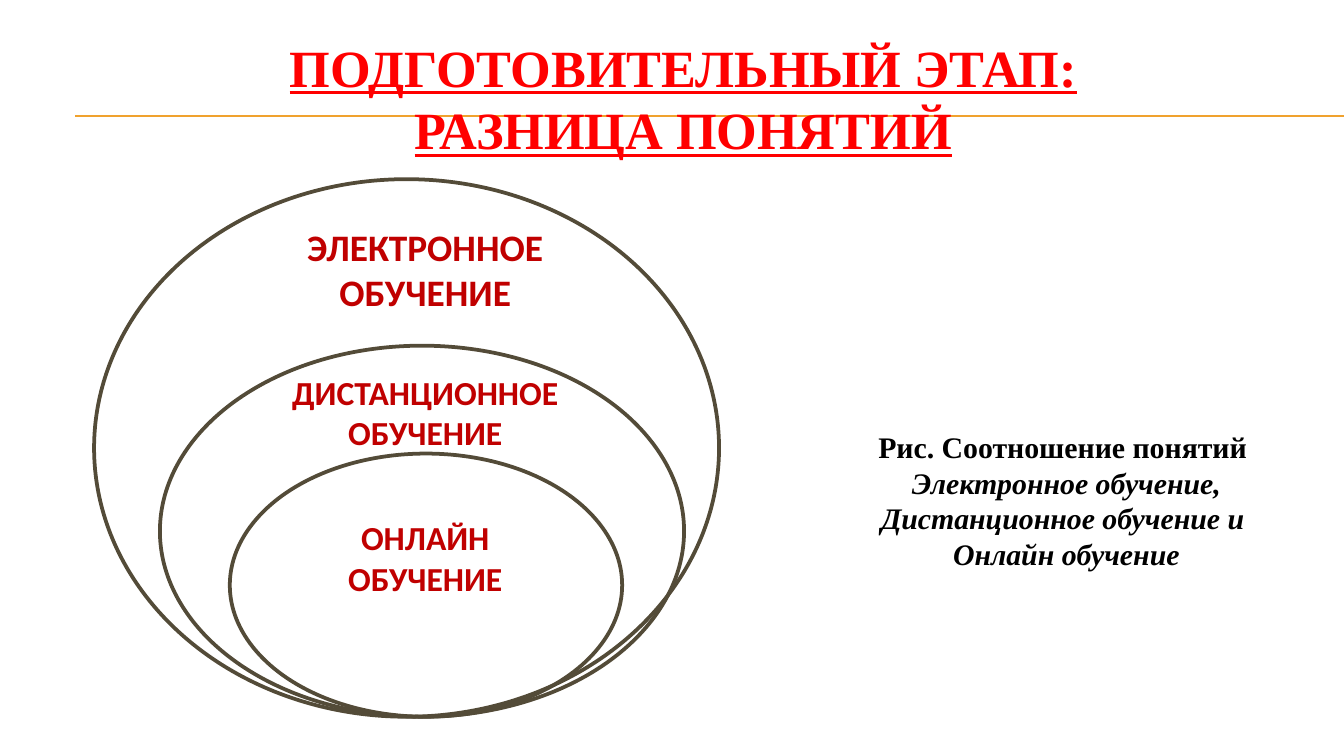
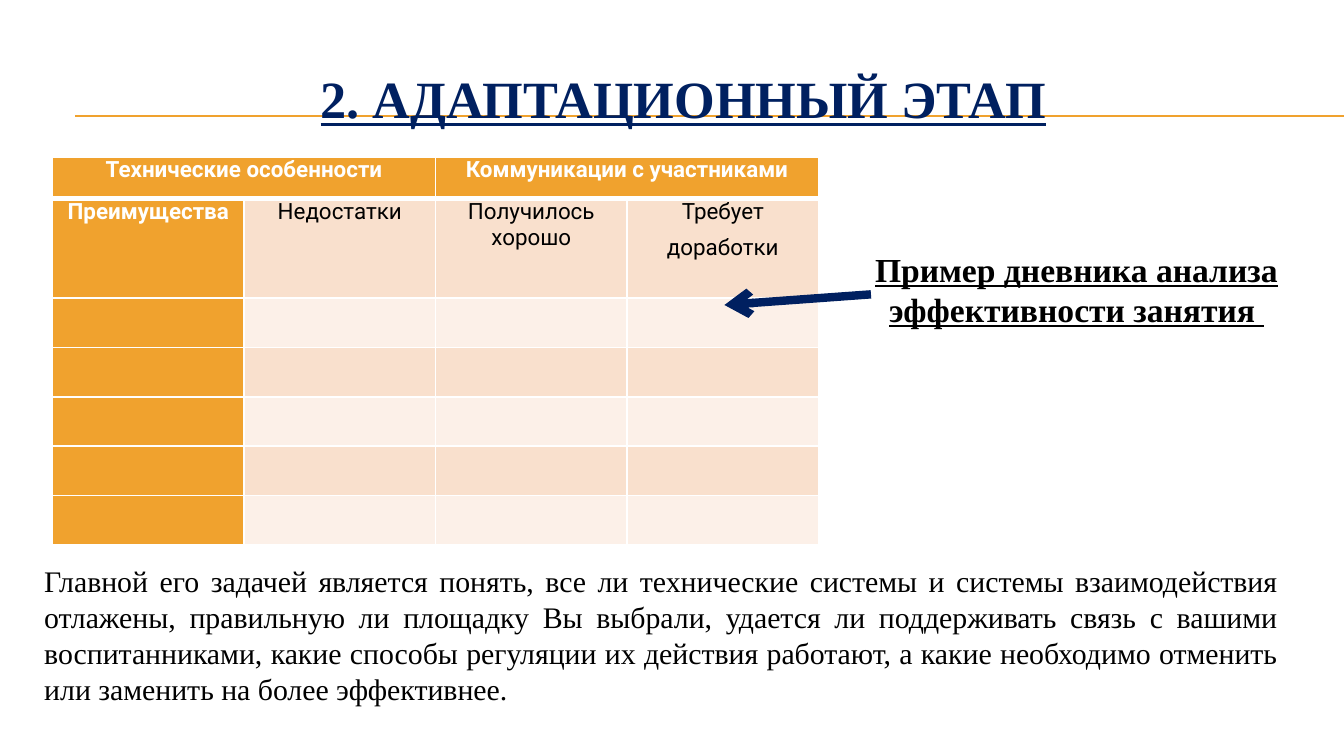
"""Build two slides on the stages of moving to distance learning."""
from dataclasses import dataclass

from lxml.etree import SubElement
from pptx import Presentation
from pptx.dml.color import RGBColor
from pptx.enum.shapes import MSO_CONNECTOR as Connector, MSO_SHAPE as Shape
from pptx.enum.text import MSO_ANCHOR as Anchor, PP_ALIGN as Align
from pptx.oxml.ns import qn
from pptx.util import Pt


@dataclass(frozen=True)
class Theme:
    serif: str = "Times New Roman"
    sans: str = "Calibri"
    grid: str = "Roboto"
    amber: str = "F0A22E"
    red: str = "FF0000"
    crimson: str = "C00000"
    navy: str = "002060"
    olive: str = "534B38"
    black: str = "000000"
    white: str = "FFFFFF"
    peach: str = "F9E0CD"
    cream: str = "FCF0E8"
    title: int = 28
    large: int = 20
    medium: int = 18
    body: int = 16
    small: int = 12


THEME = Theme()

PREPARATION_TITLE = "ПОДГОТОВИТЕЛЬНЫЙ ЭТАП:\vРАЗНИЦА ПОНЯТИЙ"
ELLIPSE_BOTTOM = 384
ELLIPSES = [(50.4, 334.8, 288), (85.7, 280.8, 198.8), (123.1, 210.2, 141)]
LABELS = [
    (116.6, THEME.large, ["ЭЛЕКТРОННОЕ", "ОБУЧЕНИЕ"]),
    (195.8, THEME.medium, ["ДИСТАНЦИОННОЕ ОБУЧЕНИЕ"]),
    (273.6, THEME.medium, ["ОНЛАЙН", "ОБУЧЕНИЕ"]),
]
CAPTION = [
    ("Рис. Соотношение понятий ", False),
    ("Электронное обучение, Дистанционное обучение и ", True),
    ("Онлайн обучение", True),
]

ADAPTATION_TITLE = "2. АДАПТАЦИОННЫЙ ЭТАП"
DIARY_HEADS = ["Технические особенности", "Коммуникации с участниками"]
DIARY_COLUMNS = [["Преимущества"], ["Недостатки"], ["Получилось хорошо"],
                 ["Требует", "доработки"]]
DIARY_ROWS = [22.3, 53.2] + [26.5] * 5
DIARY_COLUMN_WIDTH = 102.6
DIARY_NOTE = "Пример дневника анализа эффективности занятия "
GOAL = ("Главной его задачей является понять, все ли технические системы и системы "
        "взаимодействия отлажены, правильную ли площадку Вы выбрали, удается ли "
        "поддерживать связь с вашими воспитанниками, какие способы регуляции их "
        "действия работают, а какие необходимо отменить или заменить на более "
        "эффективнее.")


def rgb(color):
    return RGBColor.from_string(color)


def points(*values):
    return [Pt(value) for value in values]


def add_span(para, text, size, color, font=THEME.serif, bold=True, italic=False,
             underline=False):
    for index, line in enumerate(text.split("\v")):
        if index:
            para.add_line_break()
        span = para.add_run()
        span.text = line
        span.font.name, span.font.size = font, Pt(size)
        span.font.color.rgb = rgb(color)
        span.font.bold, span.font.italic = bold, italic
        span.font.underline = underline


def add_paras(frame, texts, align=Align.CENTER):
    for index, text in enumerate(texts):
        para = frame.add_paragraph() if index else frame.paragraphs[0]
        para.alignment = align
        yield para, text


def add_box(shapes, place, anchor=Anchor.TOP):
    frame = shapes.add_textbox(*points(*place)).text_frame
    frame.word_wrap = True
    frame.vertical_anchor = anchor
    return frame


def add_line(page, ends, color, width):
    line = page.shapes.add_connector(Connector.STRAIGHT, *points(*ends))
    line.line.color.rgb = rgb(color)
    line.line.width = Pt(width)
    SubElement(line._element.spPr, qn("a:effectLst"))
    return line


def add_page(deck, title, color):
    page = deck.slides.add_slide(deck.slide_layouts[6])
    for y in (62, 62.5):
        add_line(page, (40.4, y, 720, y), THEME.amber, 0.75)
    frame = add_box(page.shapes, (24, 27.4, 684, 49.7), Anchor.MIDDLE)
    for para, text in add_paras(frame, [title]):
        add_span(para, text, THEME.title, color, underline=True)
    return page


def add_nested_concepts(page):
    shapes = page.shapes.add_group_shape().shapes
    for left, width, height in ELLIPSES:
        place = points(left, ELLIPSE_BOTTOM - height, width, height)
        ellipse = shapes.add_shape(Shape.OVAL, *place)
        ellipse.shadow.inherit = False
        ellipse.fill.background()
        ellipse.line.color.rgb = rgb(THEME.olive)
        ellipse.line.width = Pt(2)
    for top, size, lines in LABELS:
        frame = add_box(shapes, (113, top, 229.7, 80))
        for para, text in add_paras(frame, lines):
            add_span(para, text, size, THEME.crimson, THEME.sans)


def set_borders(cell, widths):
    properties = cell._tc.get_or_add_tcPr()
    for side in "LRTB":
        border = SubElement(properties, qn(f"a:ln{side}"), w=str(Pt(widths.get(side, 1))))
        fill = SubElement(border, qn("a:solidFill"))
        SubElement(fill, qn("a:srgbClr"), val=THEME.white)


def diary_texts(row, column):
    if row == 0:
        return [] if column % 2 else [DIARY_HEADS[column // 2]]
    return DIARY_COLUMNS[column] if row == 1 else []


def fill_diary_cell(cell, row, column):
    strong = row == 0 or column == 0
    set_borders(cell, {0: {"B": 3}, 1: {"T": 3}}.get(row, {}))
    cell.fill.solid()
    band = THEME.peach if row % 2 else THEME.cream
    cell.fill.fore_color.rgb = rgb(THEME.amber if strong else band)
    cell.margin_left = cell.margin_right = Pt(5)
    cell.margin_top = cell.margin_bottom = Pt(0)
    cell.text_frame.paragraphs[0].font.size = Pt(THEME.small)
    for para, text in add_paras(cell.text_frame, diary_texts(row, column)):
        para.space_before, para.space_after = Pt(3), Pt(2.2)
        color = THEME.white if strong else THEME.black
        add_span(para, text, THEME.small, color, THEME.grid, bold=strong)


def add_diary(page):
    count = len(DIARY_COLUMNS)
    place = points(28.2, 84.2, count * DIARY_COLUMN_WIDTH, sum(DIARY_ROWS))
    table = page.shapes.add_table(len(DIARY_ROWS), count, *place).table
    table.first_row = table.horz_banding = False
    for column in table.columns:
        column.width = Pt(DIARY_COLUMN_WIDTH)
    for row, height in enumerate(DIARY_ROWS):
        table.rows[row].height = Pt(height)
        for column in range(count):
            fill_diary_cell(table.cell(row, column), row, column)
    for column in range(0, count, 2):
        table.cell(0, column).merge(table.cell(0, column + 1))


def build_preparation(deck):
    page = add_page(deck, PREPARATION_TITLE, THEME.red)
    add_nested_concepts(page)
    frame = add_box(page.shapes, (433.4, 225.4, 275.8, 85), Anchor.MIDDLE)
    for para, (text, italic) in add_paras(frame, CAPTION):
        add_span(para, text, THEME.body, THEME.black, italic=italic)


def build_adaptation(deck):
    page = add_page(deck, ADAPTATION_TITLE, THEME.navy)
    add_diary(page)
    frame = add_box(page.shapes, (16.6, 298, 675.4, 85))
    for para, text in add_paras(frame, [GOAL], Align.JUSTIFY):
        add_span(para, text, THEME.body, THEME.black, bold=False)
    frame = add_box(page.shapes, (450, 129.6, 253.4, 51))
    for para, text in add_paras(frame, [DIARY_NOTE]):
        add_span(para, text, THEME.medium, THEME.black, underline=True)
    arrow = add_line(page, (466.6, 157.7, 388.1, 163.4), THEME.navy, 4.5)
    SubElement(arrow.line._get_or_add_ln(), qn("a:tailEnd"), type="arrow")


def main():
    deck = Presentation()
    deck.slide_width, deck.slide_height = points(720, 405)
    build_preparation(deck)
    build_adaptation(deck)
    deck.save("out.pptx")


if __name__ == "__main__":
    main()
